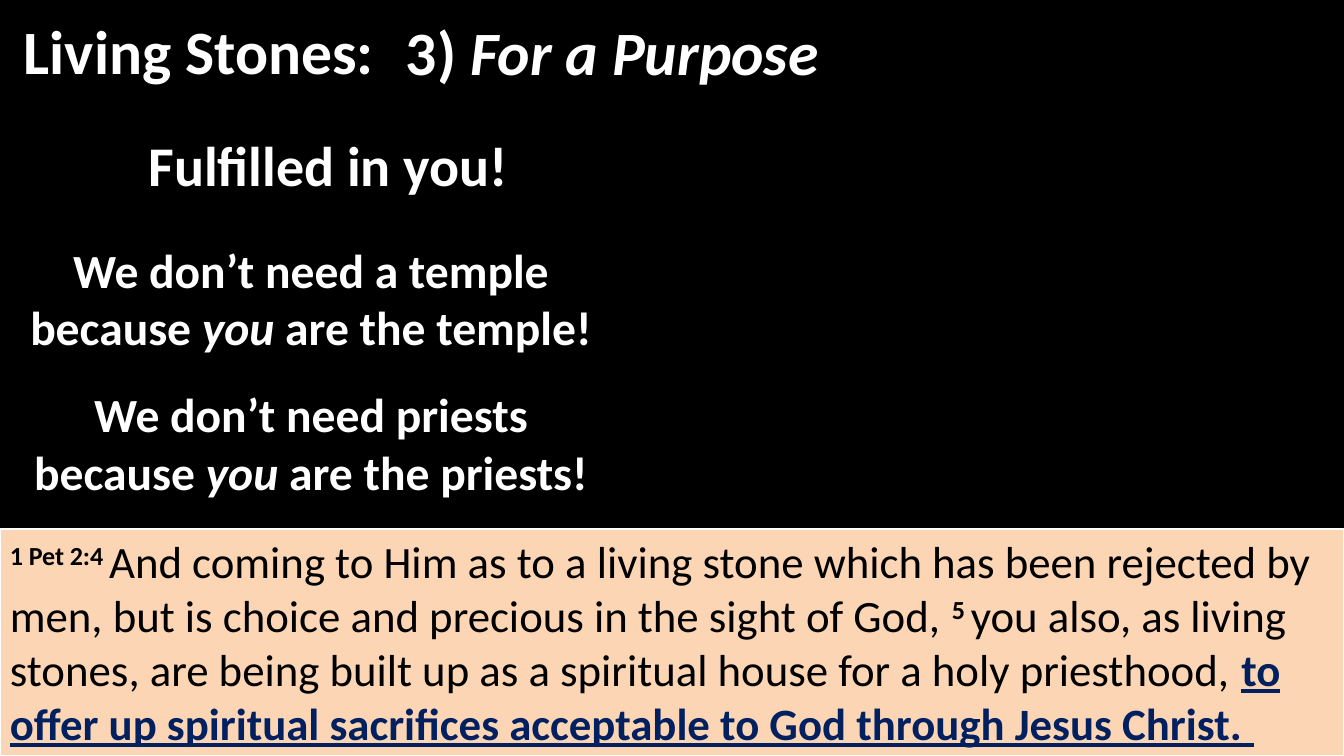
"""Build the 'Living Stones' slide with its headings, claims and Bible passage."""
from pptx import Presentation, util as u
from pptx.dml.color import RGBColor
from pptx.enum import shapes, text

WHITE, BLACK, NAVY, PEACH = "FFFFFF", "000000", "002060", "FCD5B5"
ROUND = shapes.MSO_SHAPE.ROUNDED_RECTANGLE
CALL = shapes.MSO_SHAPE.ROUNDED_RECTANGULAR_CALLOUT
RECT = shapes.MSO_SHAPE.RECTANGLE
LEFT, MID = text.PP_ALIGN.LEFT, text.PP_ALIGN.CENTER

HEADS = [
    (ROUND, (-0.04, 0, 4.17, 0.98), 44, MID, [("Living Stones: ", "b")]),
    (ROUND, (3.88, 0.02, 4.45, 0.97), 44, LEFT,
     [("3) ", "b"), ("For a Purpose", "bi")]),
    (CALL, (0.17, 1.17, 6.17, 0.92), 40, MID, [("Fulfilled in you!", "b")]),
]
CLAIMS = [
    ("We don’t need a temple because ", "you", " are the temple!"),
    ("We don’t need priests because ", "you", " are the priests!"),
]
VERSE = [
    ("1 Pet 2:4 ", "bs"),
    ("And coming to Him as to a living stone which has been rejected by men, "
     "but is choice and precious in the sight of God, ", ""),
    ("5 ", "bs"),
    ("you also, as living stones, are being built up as a spiritual house "
     "for a holy priesthood, ", ""),
    ("to offer up spiritual sacrifices acceptable to God through "
     "Jesus Christ. ", "bu"),
]


def paint(hue):
    return RGBColor.from_string(hue)


def add_text(slide, kind, box, size, align, runs, hue=WHITE):
    shape = slide.shapes.add_shape(kind, *map(u.Inches, box))
    shape.shadow.inherit = False
    shape.fill.background()
    shape.line.fill.background()
    if kind == CALL:
        shape.adjustments[0] = -0.22
        shape.adjustments[1] = 0.5
    frame = shape.text_frame
    frame.word_wrap = True
    frame.vertical_anchor = text.MSO_ANCHOR.MIDDLE
    para = frame.paragraphs[0]
    para.alignment = align
    for words, style in runs:
        run = para.add_run()
        run.text = words
        font = run.font
        font.name, font.size = "Calibri", u.Pt(size)
        font.bold, font.italic = "b" in style, "i" in style
        font.underline = "u" in style
        font.color.rgb = paint(NAVY if "u" in style else hue)
        if "s" in style:
            run._r.get_or_add_rPr().set("baseline", "30000")
    return shape


def main():
    deck = Presentation()
    deck.slide_width, deck.slide_height = u.Inches(13.33), u.Inches(7.5)
    slide = deck.slides.add_slide(deck.slide_layouts[6])
    back = slide.background.fill
    back.solid()
    back.fore_color.rgb = paint(BLACK)

    for head in HEADS:
        add_text(slide, *head)
    for row, parts in enumerate(CLAIMS):
        box = (0, 2.5 + 1.43 * row, 6.17, 0.92)
        add_text(slide, CALL, box, 34, MID, zip(parts, ("b", "bi", "b")))

    panel = add_text(slide, RECT, (0, 5.25, 13.33, 2.25), 32, LEFT, VERSE, BLACK)
    panel.text_frame.vertical_anchor = text.MSO_ANCHOR.TOP
    panel.fill.solid()
    panel.fill.fore_color.rgb = paint(PEACH)
    panel.line.color.rgb = paint(WHITE)
    panel.line.width = u.Pt(1.5)
    deck.save("out.pptx")


if __name__ == "__main__":
    main()
